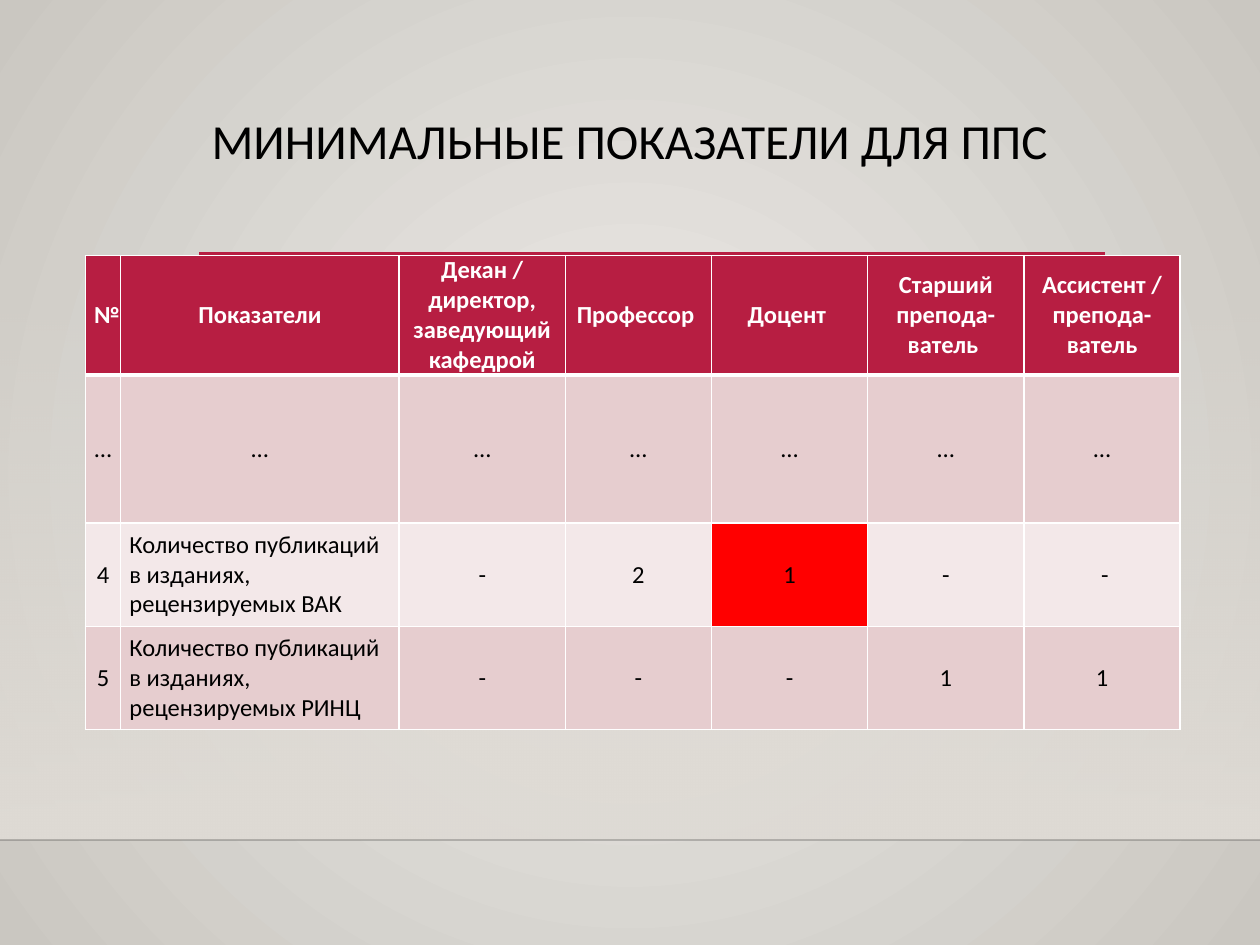
from lxml import etree
from pptx import Presentation
from pptx.dml.color import RGBColor
from pptx.enum.shapes import MSO_CONNECTOR as Connector, MSO_SHAPE as Shape
from pptx.enum.text import MSO_ANCHOR as Anchor, PP_ALIGN as Align
from pptx.oxml import parse_xml
from pptx.oxml.ns import nsdecls, qn
from pptx.util import Pt

BLACK = RGBColor(0x00, 0x00, 0x00)
WHITE = RGBColor(0xFF, 0xFF, 0xFF)
CRIMSON = RGBColor(0xB7, 0x1E, 0x42)
PINK = RGBColor(0xE6, 0xCD, 0xCF)
PALE_PINK = RGBColor(0xF3, 0xE8, 0xE9)
RED = RGBColor(0xFF, 0x00, 0x00)
IVORY = RGBColor(0xEC, 0xEA, 0xE7)
STONE = RGBColor(0xCA, 0xC7, 0xC1)
SAND = RGBColor(0xDF, 0xDB, 0xD5)
FONT = "Calibri"


def set_gradient(fill, properties, start, end, direction, start_alpha=100):
    """Give a two-stop gradient the direction XML and the start opacity in percent."""
    fill.gradient()
    gradient = properties.find(qn("a:gradFill"))
    for child in list(gradient):
        gradient.remove(child)
    gradient.append(parse_xml(
        f'<a:gsLst {nsdecls("a")}>'
        f'<a:gs pos="0"><a:srgbClr val="{start}"><a:alpha val="{start_alpha * 1000}"/></a:srgbClr></a:gs>'
        f'<a:gs pos="100000"><a:srgbClr val="{end}"/></a:gs></a:gsLst>'))
    gradient.append(parse_xml(direction))


def add_border(cell, side, width):
    cell.fill.background()
    properties = cell._tc.get_or_add_tcPr()
    properties.find(qn("a:noFill")).addprevious(parse_xml(
        f'<a:ln{side} {nsdecls("a")} w="{Pt(width)}"><a:solidFill>'
        f'<a:srgbClr val="{WHITE}"/></a:solidFill></a:ln{side}>'))


presentation = Presentation()
presentation.slide_width, presentation.slide_height = Pt(720), Pt(540)
slide = presentation.slides.add_slide(presentation.slide_layouts[5])
title = slide.shapes.title

# Background
background = slide.background.fill
set_gradient(
    background, slide.element.cSld.find(qn("p:bg")).find(qn("p:bgPr")), IVORY, STONE,
    f'<a:path {nsdecls("a")} path="circle">'
    '<a:fillToRect l="50000" t="50000" r="50000" b="50000"/></a:path>')

wash = slide.shapes.add_shape(Shape.RECTANGLE, Pt(0), Pt(158.5), Pt(720), Pt(321.5))
wash.shadow.inherit = False
wash.line.fill.background()
set_gradient(wash.fill, wash.element.spPr, SAND, SAND,
             f'<a:lin {nsdecls("a")} ang="5400000" scaled="0"/>', start_alpha=0)
title.element.addprevious(wash.element)

# Floor line and title rule
for left, right, y, color, width, opacity in (
    (0, 720, 480, BLACK, 1, 20),
    (113.75, 631.5, 145.5, CRIMSON, 2.5, 100),
):
    rule = slide.shapes.add_connector(Connector.STRAIGHT, Pt(left), Pt(y), Pt(right), Pt(y))
    rule.line.color.rgb = color
    rule.line.width = Pt(width)
    properties = rule.element.spPr
    color_element = next(properties.iter(qn("a:srgbClr")))
    etree.SubElement(color_element, qn("a:alpha"), val=str(opacity * 1000))
    etree.SubElement(properties, qn("a:effectLst"))
    title.element.addprevious(rule.element)

# Title
title.left, title.top, title.width, title.height = Pt(113.75), Pt(63.4), Pt(517.75), Pt(82.5)
title.text_frame.text = "МИНИМАЛЬНЫЕ ПОКАЗАТЕЛИ ДЛЯ ППС"
title.text_frame.vertical_anchor = Anchor.TOP
title.text_frame.word_wrap = True
paragraph = title.text_frame.paragraphs[0]
paragraph.alignment = Align.LEFT
paragraph.line_spacing = 0.9
paragraph.font.color.rgb = BLACK
for name, value in {"name": FONT, "size": Pt(28), "bold": False}.items():
    setattr(paragraph.font, name, value)

# Table
ROWS = (
    ("№", "Показатели", "Декан / директор,\nзаведующий кафедрой", "Профессор ", "Доцент ",
     "Старший препода-ватель ", "Ассистент / препода-ватель"),
    ("…",) * 7,
    ("4", "Количество публикаций в изданиях, рецензируемых ВАК", "-", "2", "1", "-", " -"),
    ("5", "Количество публикаций в изданиях, рецензируемых РИНЦ", "-", "-", "-", "1", "1"),
)
COLUMN_WIDTHS = (20.2, 159.1, 95, 83.5, 89.3, 89.3, 89.3)
ROW_HEIGHTS = (67.7, 84.7, 59, 59)
ROW_FILLS = (CRIMSON, PINK, PALE_PINK, PINK)
HIGHLIGHT = (2, 4)
CELL_FORMAT = {"vertical_anchor": Anchor.MIDDLE, "margin_left": Pt(5), "margin_right": Pt(5),
               "margin_top": 0, "margin_bottom": 0}

table = slide.shapes.add_table(
    len(ROWS), len(COLUMN_WIDTHS), Pt(48.8), Pt(146),
    Pt(sum(COLUMN_WIDTHS)), Pt(sum(ROW_HEIGHTS))).table
for column, width in zip(table.columns, COLUMN_WIDTHS):
    column.width = Pt(width)
for row, height in zip(table.rows, ROW_HEIGHTS):
    row.height = Pt(height)

for row_index, texts in enumerate(ROWS):
    header = row_index == 0
    for column_index, text in enumerate(texts):
        cell = table.cell(row_index, column_index)
        cell.text = text
        for name, value in CELL_FORMAT.items():
            setattr(cell, name, value)
        for side in "LRTB":
            header_edge = (header and side == "B") or (row_index == 1 and side == "T")
            add_border(cell, side, 3 if header_edge else 1)
        cell.fill.solid()
        highlighted = (row_index, column_index) == HIGHLIGHT
        cell.fill.fore_color.rgb = RED if highlighted else ROW_FILLS[row_index]
        description = column_index == 1 and row_index > 1
        for paragraph in cell.text_frame.paragraphs:
            paragraph.alignment = Align.LEFT if description else Align.CENTER
            paragraph.font.color.rgb = WHITE if header else BLACK
            for name, value in {"name": FONT, "size": Pt(14), "bold": header}.items():
                setattr(paragraph.font, name, value)

presentation.save("out.pptx")
